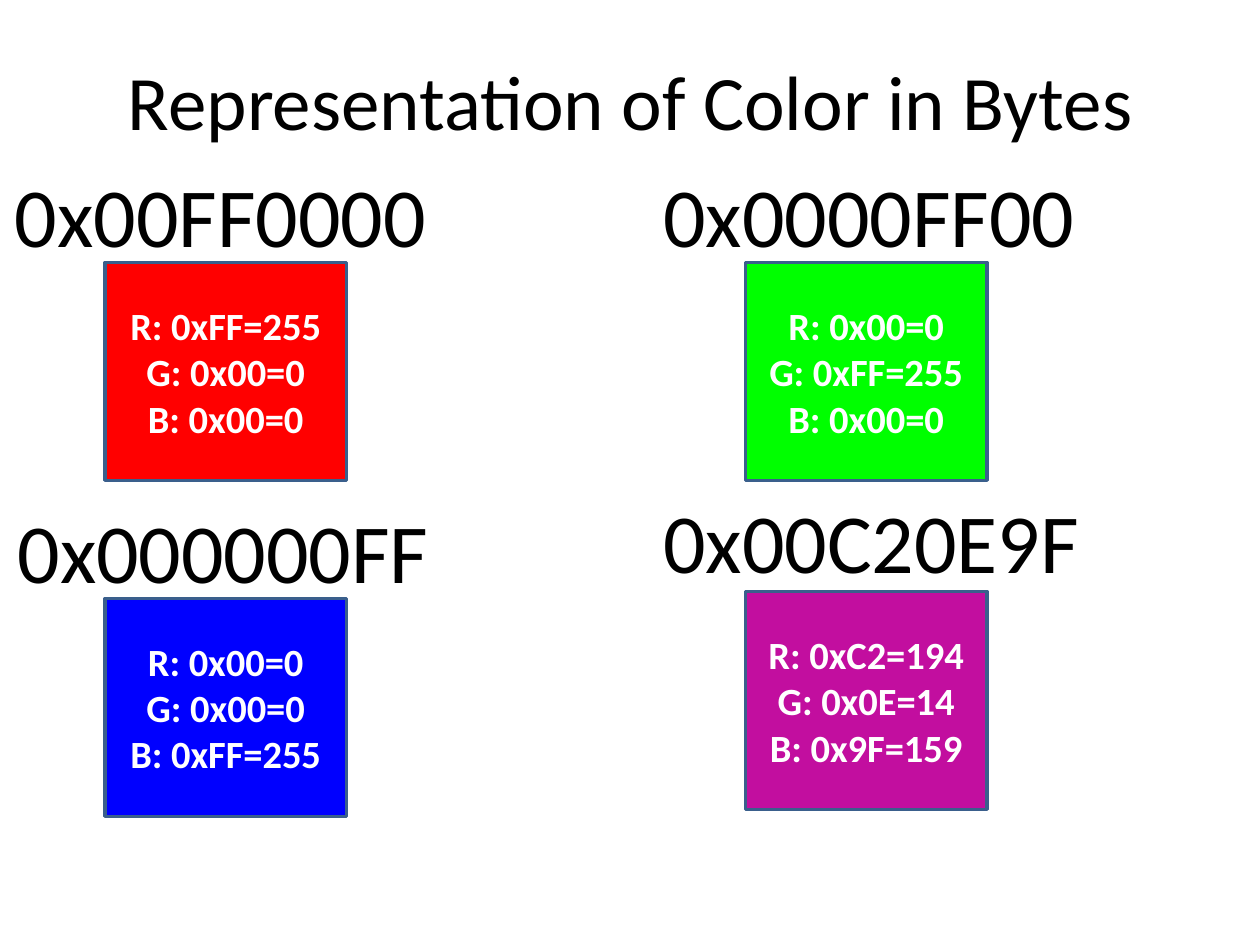
"""Build a slide showing how colors are written in bytes."""
from pptx import Presentation
from pptx.dml.color import RGBColor
from pptx.enum.shapes import MSO_SHAPE
from pptx.enum.text import MSO_ANCHOR, PP_ALIGN
from pptx.util import Pt

RECT = MSO_SHAPE.RECTANGLE
MIDDLE = MSO_ANCHOR.MIDDLE
TOP = MSO_ANCHOR.TOP
LEFT = PP_ALIGN.LEFT
CENTER = PP_ALIGN.CENTER

BLACK = RGBColor(0x00, 0x00, 0x00)
WHITE = RGBColor(0xFF, 0xFF, 0xFF)
EDGE = RGBColor(0x3A, 0x5F, 0x8C)
RED = RGBColor(0xFF, 0x00, 0x00)
GREEN = RGBColor(0x00, 0xFF, 0x00)
BLUE = RGBColor(0x00, 0x00, 0xFF)
PURPLE = RGBColor(0xC2, 0x0E, 0x9F)

SAMPLES = [
    (RED, 1.5, 90, 60, 150),
    (GREEN, 372, 90, 426, 150),
    (BLUE, 3, 282, 60, 342),
    (PURPLE, 372, 276, 426, 338),
]


class Painter:
    font = "Calibri"

    def __init__(self, slide):
        self.slide = slide

    def fill_text(self, shape, lines, size, color, align, anchor, bold=False):
        frame = shape.text_frame
        frame.word_wrap = True
        frame.vertical_anchor = anchor
        for i, line in enumerate(lines):
            para = frame.add_paragraph() if i else frame.paragraphs[0]
            para.alignment = align
            run = para.add_run()
            run.text = line
            run.font.name = self.font
            run.font.size = Pt(size)
            run.font.bold = bold
            run.font.color.rgb = color

    def label(self, text, x, y, w, h, size, align=LEFT, anchor=TOP):
        box = self.slide.shapes.add_textbox(Pt(x), Pt(y), Pt(w), Pt(h))
        self.fill_text(box, [text], size, BLACK, align, anchor)

    def swatch(self, color, x, y):
        box = self.slide.shapes.add_shape(RECT, Pt(x), Pt(y), Pt(138), Pt(124.5))
        box.shadow.inherit = False
        box.fill.solid()
        box.fill.fore_color.rgb = color
        box.line.color.rgb = EDGE
        box.line.width = Pt(2)
        lines = [f"{name}: 0x{byte:02X}={byte}" for name, byte in zip("RGB", color)]
        self.fill_text(box, lines, 22, WHITE, CENTER, MIDDLE, bold=True)


def main():
    deck = Presentation()
    deck.slide_width, deck.slide_height = Pt(720), Pt(540)
    paint = Painter(deck.slides.add_slide(deck.slide_layouts[6]))
    paint.label("Representation of Color in Bytes", 36.5, 12, 648, 90, 44, CENTER, MIDDLE)
    for color, x, y, left, top in SAMPLES:
        paint.label(f"0x00{color}", x, y, 318, 57, 48)
        paint.swatch(color, left, top)
    deck.save("out.pptx")


if __name__ == "__main__":
    main()
